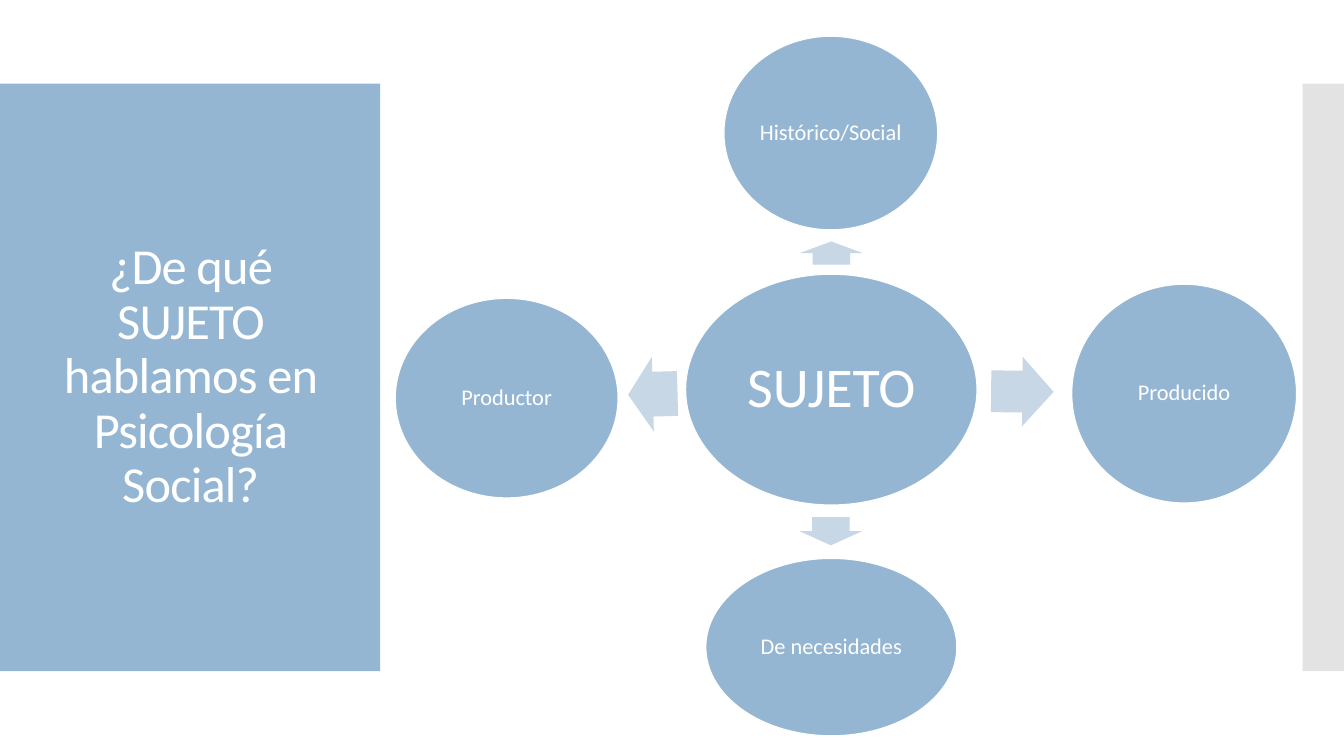
from lxml.etree import SubElement
from pptx import Presentation
from pptx.dml.color import RGBColor
from pptx.enum.shapes import MSO_SHAPE
from pptx.enum.text import MSO_ANCHOR, PP_ALIGN
from pptx.oxml.ns import qn
from pptx.util import Emu, Pt

PX = 9144  # 100 px to the inch
FONT = "Calibri"
COLORS = {"blue": "94B6D2", "pale": "C8D7E5", "gray": "C8C8C8", "white": "FFFFFF"}

# text, size in points, inset, box
HUB = ("SUJETO", 40, 6, (680, 272, 289, 229))
NODES = [
    ("Histórico/Social", 16, 2, (718, 36, 212, 192)),
    ("Producido", 16, 2, (1063, 282, 223, 217)),
    ("De necesidades", 16, 2, (700, 554, 249, 176)),
    ("Productor", 16, 2, (392, 296, 221, 198)),
]
# rotation, box before rotation
ARROWS = [
    (270, (813, 220, 23, 62)),
    (0.6, (983, 354, 62, 69)),
    (90, (810, 496, 28, 62)),
    (178.5, (623, 354, 49, 74)),
]


def emu(box):
    return [Emu(n * PX) for n in box]


def rgb(name):
    return RGBColor.from_string(COLORS[name])


def add_form(slide, kind, box, color):
    """Add a flat, filled shape with no outline."""
    form = slide.shapes.add_shape(kind, *emu(box))
    form.shadow.inherit = False
    form.fill.solid()
    form.fill.fore_color.rgb = rgb(color)
    form.line.fill.background()
    return form


def set_text(form, text, size, inset):
    """Write centred white text, with inset as (side, top) in px."""
    frame = form.text_frame
    frame.word_wrap = True
    frame.vertical_anchor = MSO_ANCHOR.MIDDLE
    side, top = emu(inset)
    frame.margin_left = frame.margin_right = side
    frame.margin_top = frame.margin_bottom = top
    frame.text = text
    para = frame.paragraphs[0]
    para.alignment = PP_ALIGN.CENTER
    para.line_spacing = 0.9
    run = para.runs[0]
    run.font.name = FONT
    run.font.size = Pt(size)
    run.font.color.rgb = rgb("white")
    return run


def add_title(slide, box, text):
    add_form(slide, MSO_SHAPE.RECTANGLE, box, "blue")
    left, top, width, height = box
    area = (left + 28, top + 40, width - 55, height - 80)
    label = slide.shapes.add_textbox(*emu(area))
    run = set_text(label, text, 36, (10, 5))
    run.font._element.set("spc", "-60")


def add_strip(slide, box):
    strip = add_form(slide, MSO_SHAPE.RECTANGLE, box, "gray")
    tint = strip.fill._xPr.find(".//" + qn("a:srgbClr"))
    SubElement(tint, qn("a:alpha")).set("val", "50000")


def add_node(slide, text, size, inset, box):
    node = add_form(slide, MSO_SHAPE.OVAL, box, "blue")
    node.line.color.rgb = rgb("white")
    node.line.width = Pt(0.85)
    set_text(node, text, size, (inset, inset))


def add_arrow(slide, angle, box):
    arrow = add_form(slide, MSO_SHAPE.RIGHT_ARROW, box, "pale")
    arrow.adjustments[0] = 0.6
    arrow.adjustments[1] = 0.5
    arrow.rotation = angle


def add_wheel(slide):
    """Add the hub, then an arrow and a node on each side of it."""
    add_node(slide, *HUB)
    for arrow, node in zip(ARROWS, NODES):
        add_arrow(slide, *arrow)
        add_node(slide, *node)


def main():
    deck = Presentation()
    deck.slide_width, deck.slide_height = emu((1333, 750))
    slide = deck.slides.add_slide(deck.slide_layouts[6])
    add_title(slide, (0, 83, 377, 583),
              "¿De qué SUJETO hablamos en Psicología Social?")
    add_strip(slide, (1292, 83, 41, 583))
    add_wheel(slide)
    deck.save("out.pptx")


if __name__ == "__main__":
    main()
